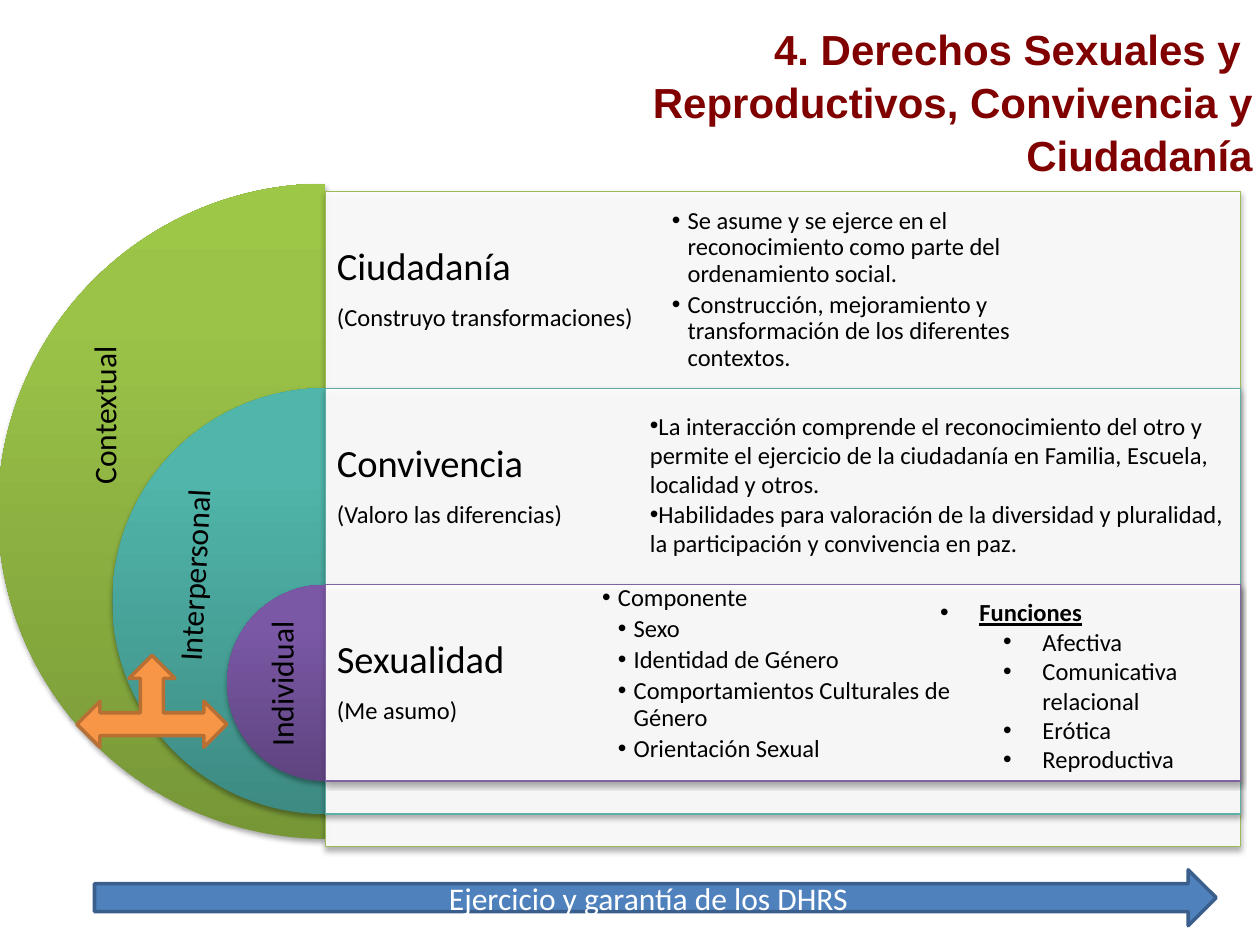
"""Build the slide on sexual and reproductive rights, coexistence and citizenship."""
from copy import deepcopy

from lxml import etree
from pptx import Presentation
from pptx import util as u
from pptx.dml.color import RGBColor
from pptx.enum import shapes, text
from pptx.oxml.ns import qn

COLORS = {
    "title": "800000", "text": "000000", "white": "FFFFFF",
    "process": "4F81BD", "process_line": "3A5F8C",
    "links": "F79646", "links_line": "B76F34",
}
AXIS, PANEL_WIDTH, BAND_TOP, BAND = 186, 523, 109.5, 112.3
LEVELS = [
    ("Ciudadanía", "(Construyo transformaciones)", 105, 374.4,
     "9BBB59", ("779737", "9BC348", "9DC746")),
    ("Convivencia", "(Valoro las diferencias)", BAND_TOP + BAND, 243.4,
     "5EAFA6", ("3D8B83", "50B5AA", "4EB8AC")),
    ("Sexualidad", "(Me asumo)", BAND_TOP + 2 * BAND, BAND,
     "8064A2", ("5F4480", "7B58A6", "7C57A8")),
]
CITIZENSHIP = [
    (1, "Se asume y se ejerce en el reconocimiento como parte del ordenamiento social."),
    (1, "Construcción, mejoramiento y transformación de los diferentes contextos."),
]
COEXISTENCE = [
    (1, "La interacción comprende el reconocimiento del otro y permite el ejercicio "
        "de la ciudadanía en Familia, Escuela, localidad y otros."),
    (1, "Habilidades para valoración de la diversidad y pluralidad, la participación "
        "y convivencia en paz."),
]
COMPONENTS = [
    (1, "Componente"), (2, "Sexo"), (2, "Identidad de Género"),
    (2, "Comportamientos Culturales de Género"), (2, "Orientación Sexual"),
]
FUNCTIONS = [
    (0, "Funciones"), (1, "Afectiva"), (1, "Comunicativa relacional"),
    (1, "Erótica"), (1, "Reproductiva"),
]


class Deck:
    """Hold the style and the current slide."""

    def __init__(self):
        self.prs = Presentation()
        self.prs.slide_width, self.prs.slide_height = u.Pt(720), u.Pt(540)
        self.slide = self.prs.slides.add_slide(self.prs.slide_layouts[4])

    def color(self, key):
        return RGBColor.from_string(COLORS.get(key, key))

    def font(self, paragraph, size, color="text", name="Calibri", bold=False):
        font = paragraph.font
        font.size, font.name, font.bold = u.Pt(size), name, bold
        font.color.rgb = self.color(color)

    def frame(self, shape, inset=None, anchor=text.MSO_ANCHOR.MIDDLE):
        frame = shape.text_frame
        frame.word_wrap, frame.vertical_anchor = True, anchor
        frame.auto_size = text.MSO_AUTO_SIZE.NONE
        if inset is not None:
            frame.margin_left = frame.margin_right = u.Pt(inset)
            frame.margin_top = frame.margin_bottom = u.Pt(inset)
        return frame

    def place(self, shape, box):
        shape.left, shape.top, shape.width, shape.height = map(u.Pt, box)

    def title(self, lines, box):
        title = self.slide.shapes.title
        self.place(title, box)
        frame = self.frame(title)
        frame.text = "\n".join(lines)
        for paragraph in frame.paragraphs:
            paragraph.alignment = text.PP_ALIGN.RIGHT
            paragraph.line_spacing = 1.05
            self.font(paragraph, 24, "title", "Arial", True)

    def shape(self, kind, box, line=None, width=2, fill=None):
        shape = self.slide.shapes.add_shape(kind, *map(u.Pt, box))
        shape.shadow.inherit = False
        if fill:
            shape.fill.solid()
            shape.fill.fore_color.rgb = self.color(fill)
        if line:
            shape.line.color.rgb = self.color(line)
            shape.line.width = u.Pt(width)
        else:
            shape.line.fill.background()
        return shape

    def cast_shadow(self, shape):
        effects = shape._element.spPr.find(qn("a:effectLst"))
        shadow = etree.SubElement(effects, qn("a:outerShdw"), blurRad="40000",
                                  dist="23000", dir="5400000", rotWithShape="0")
        tone = etree.SubElement(shadow, qn("a:srgbClr"), val=COLORS["text"])
        etree.SubElement(tone, qn("a:alpha"), val="35000")

    def half_disc(self, top, diameter, tones):
        disc = self.shape(shapes.MSO_SHAPE.PIE,
                          (AXIS - diameter / 2, top, diameter, diameter))
        disc.adjustments[0], disc.adjustments[1] = 54, 162
        disc.fill.gradient()
        disc.fill.gradient_angle = 90
        last_stop = list(disc._element.spPr.iter(qn("a:gs")))[-1]
        last_stop.addnext(deepcopy(last_stop))
        for stop, position, tone in zip(disc.fill.gradient_stops, (0, 0.8, 1), tones):
            stop.position, stop.color.rgb = position, self.color(tone)
        self.cast_shadow(disc)

    def panel(self, top, height, line):
        panel = self.shape(shapes.MSO_SHAPE.RECTANGLE,
                           (AXIS, top, PANEL_WIDTH, height), line, 0.75, "white")
        tone = panel._element.spPr.find(qn("a:solidFill"))[0]
        etree.SubElement(tone, qn("a:alpha"), val="90000")
        self.cast_shadow(panel)

    def heading(self, name, note, top):
        box = self.slide.shapes.add_textbox(*map(u.Pt, (AXIS, top, 261.5, BAND)))
        frame = self.frame(box, 6.5)
        frame.text = f"{name}\n{note}"
        for paragraph, size, after in zip(frame.paragraphs, (22, 14), (9.4, 6)):
            paragraph.line_spacing, paragraph.space_after = 0.9, u.Pt(after)
            self.font(paragraph, size)

    def bullets(self, idx, items, box, indents, hanging, spacing=1.0, after=0,
                inset=19.4, anchor=text.MSO_ANCHOR.MIDDLE):
        holder = self.slide.placeholders[idx]
        self.place(holder, box)
        self.slide.shapes._spTree.append(holder._element)
        frame = self.frame(holder, inset, anchor)
        frame.text = "\n".join(item for _, item in items)
        for paragraph, (level, _) in zip(frame.paragraphs, items):
            paragraph.level = level
            paragraph.line_spacing = spacing
            paragraph.space_before, paragraph.space_after = u.Pt(0), u.Pt(after)
            props = paragraph._p.get_or_add_pPr()
            props.set("marL", str(u.Pt(indents[level])))
            props.set("indent", str(-u.Pt(hanging)))
            etree.SubElement(props, qn("a:buFont"), typeface="Arial")
            etree.SubElement(props, qn("a:buChar"), char="•")
            self.font(paragraph, 14)
        return frame

    def side_label(self, caption, box, rotation=270):
        label = self.slide.shapes.add_textbox(*map(u.Pt, box))
        label.rotation = rotation
        frame = self.frame(label, anchor=text.MSO_ANCHOR.TOP)
        frame.text = caption
        self.font(frame.paragraphs[0], 18)

    def process_arrow(self, caption, box):
        arrow = self.shape(shapes.MSO_SHAPE.RIGHT_ARROW, box, "process_line",
                           fill="process")
        frame = self.frame(arrow)
        frame.text = caption
        frame.paragraphs[0].alignment = text.PP_ALIGN.CENTER
        self.font(frame.paragraphs[0], 18, "white")


def main():
    deck = Deck()
    deck.title(["4. Derechos Sexuales y ", "Reproductivos, Convivencia y Ciudadanía"],
               (348.5, 15, 374.5, 85))
    for row, (name, note, disc_top, diameter, line, tones) in enumerate(LEVELS):
        top = BAND_TOP + row * BAND
        deck.half_disc(disc_top, diameter, tones)
        deck.panel(top, diameter, line)
        deck.heading(name, note, top)

    compact = {"indents": (0, 9, 18), "hanging": 9, "spacing": 0.9, "after": 2.6}
    deck.bullets(1, CITIZENSHIP, (364.5, BAND_TOP, 261.5, BAND), **compact)
    deck.bullets(2, COEXISTENCE, (352, 220.5, 368.5, BAND), (0, 0), 0)
    deck.bullets(3, COMPONENTS, (324.7, 329, 261.5, BAND), **compact)

    deck.side_label("Individual", (112.5, 371, 96.5, 29))
    deck.side_label("Interpersonal", (42, 301, 139, 29), 273)
    deck.side_label("Contextual", (-10, 200, 139, 29))
    deck.process_arrow("Ejercicio y garantía de los DHRS", (54, 497, 641, 32))

    functions = deck.bullets(4, FUNCTIONS, (530, 337.7, 164, 108.7), (22.5, 58.5), 22.5,
                             inset=3.6, anchor=text.MSO_ANCHOR.TOP)
    functions.margin_left = functions.margin_right = u.Pt(7.2)
    functions.paragraphs[0].font.bold = True
    functions.paragraphs[0].font.underline = True

    deck.shape(shapes.MSO_SHAPE.LEFT_RIGHT_UP_ARROW, (44, 374.5, 85.7, 52.5),
               "links_line", fill="links")
    deck.prs.save("out.pptx")


if __name__ == "__main__":
    main()
